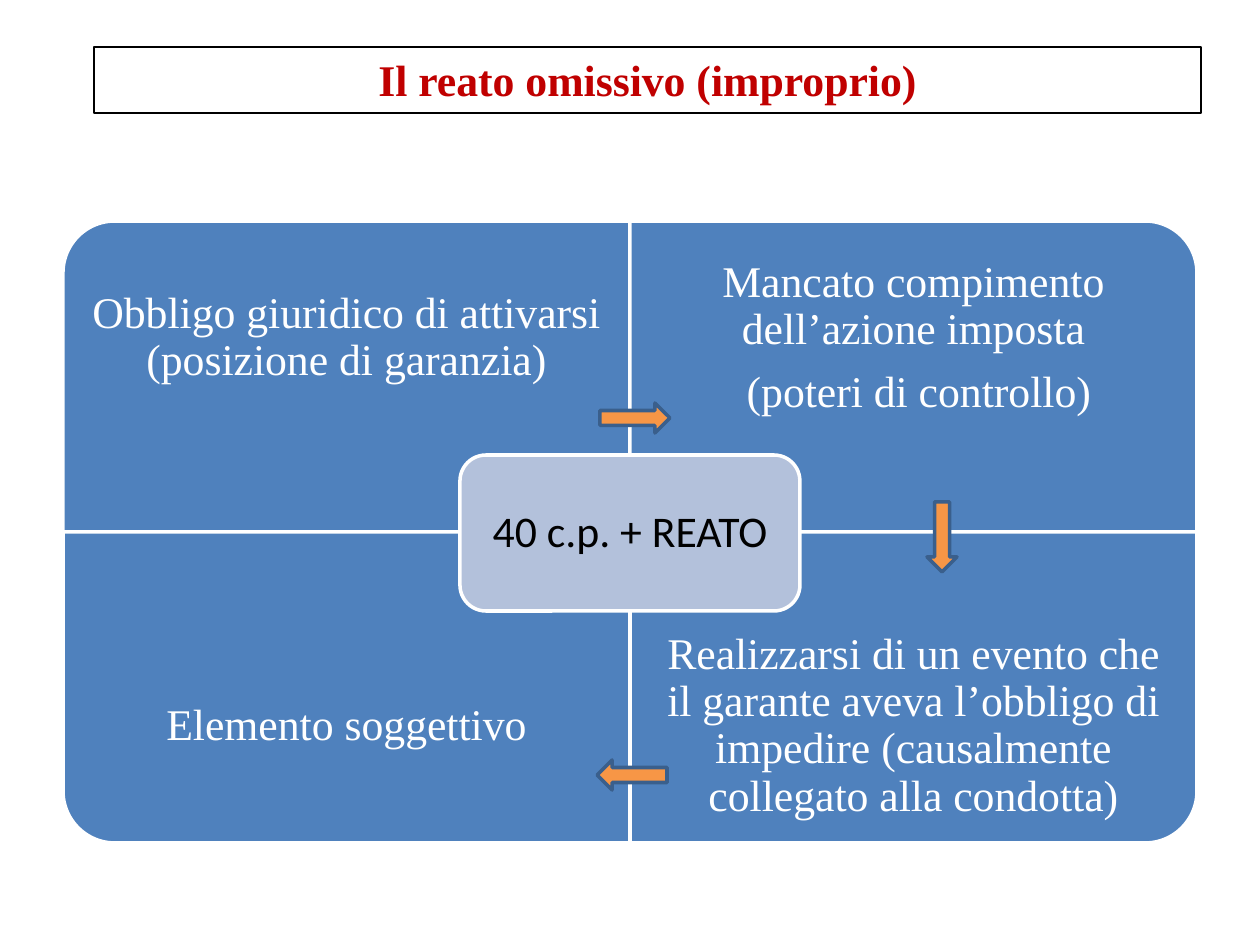
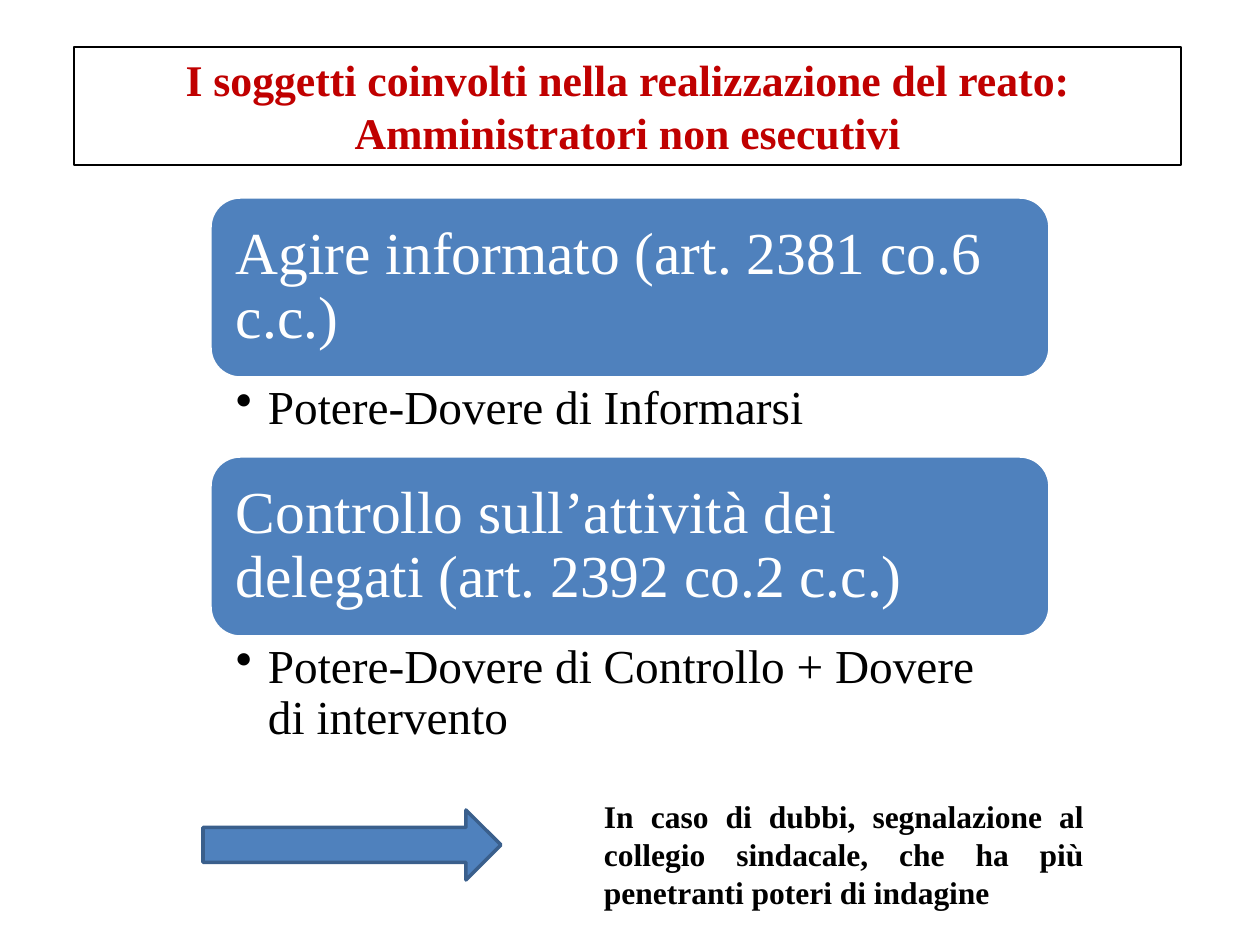
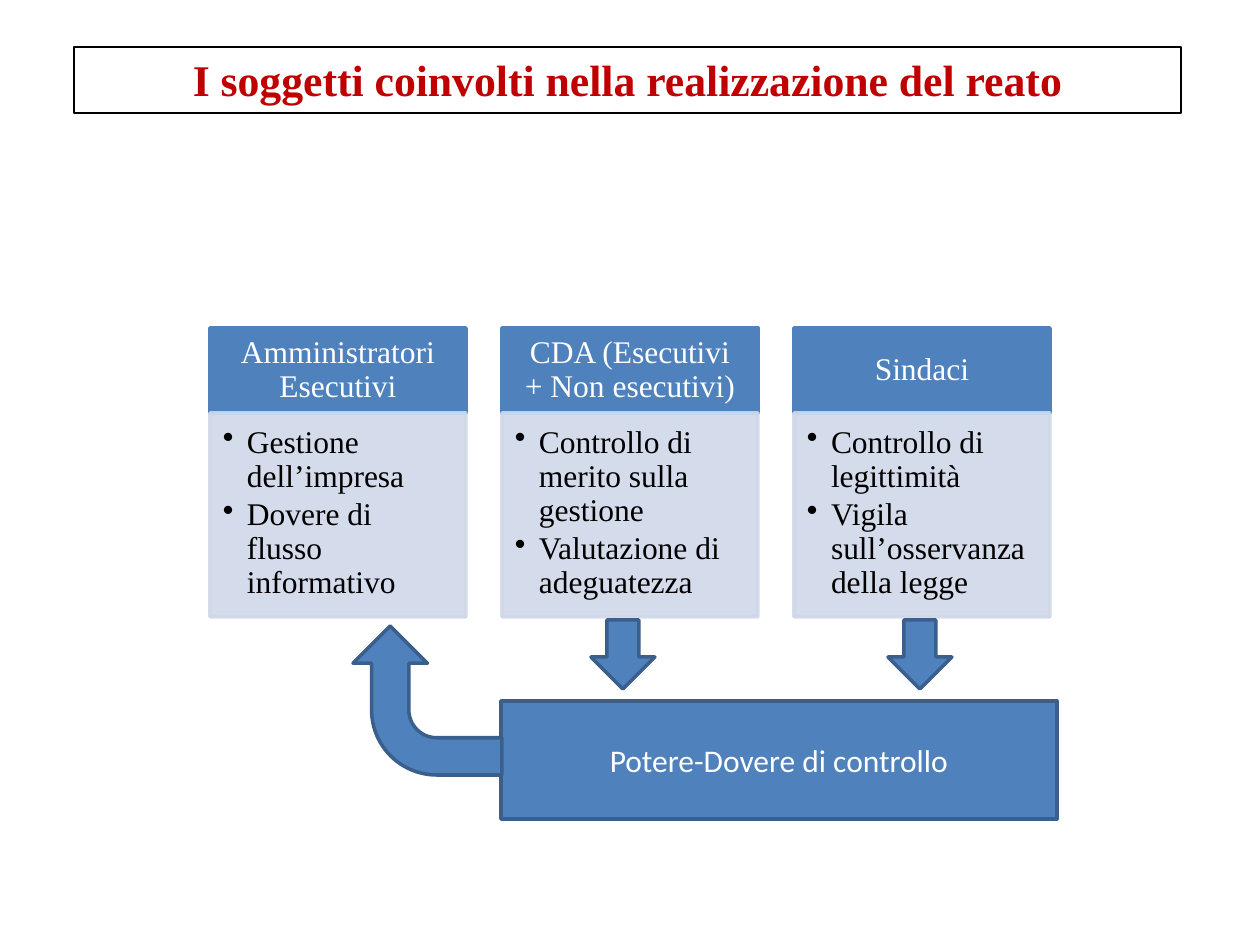
"""Build three slides on omissive offences and the people involved in them."""
import pptx
import pptx.dml.color
import pptx.enum.shapes
import pptx.enum.text
import pptx.oxml.ns
import pptx.util
from lxml import etree

PX = 914400 // 126
SERIF = "Times New Roman"
SANS = "Calibri"
BLACK = pptx.dml.color.RGBColor(0x00, 0x00, 0x00)
WHITE = pptx.dml.color.RGBColor(0xFF, 0xFF, 0xFF)
RED = pptx.dml.color.RGBColor(0xC0, 0x00, 0x00)
BLUE = pptx.dml.color.RGBColor(0x4F, 0x81, 0xBD)
DARK_BLUE = pptx.dml.color.RGBColor(0x3A, 0x5F, 0x8C)
GREY_BLUE = pptx.dml.color.RGBColor(0xB3, 0xC1, 0xDB)
PALE_BLUE = pptx.dml.color.RGBColor(0xD0, 0xD8, 0xE8)
ORANGE = pptx.dml.color.RGBColor(0xF7, 0x96, 0x46)
PRESET = pptx.enum.shapes.MSO_SHAPE
ALIGN = pptx.enum.text.PP_ALIGN
ANCHOR = pptx.enum.text.MSO_ANCHOR
qn = pptx.oxml.ns.qn


def draw(slide, preset, box, fill, outline, rotation=0):
    """Add a filled preset shape with a 2 pt outline; box is in px."""
    shape = slide.shapes.add_shape(preset, *[length * PX for length in box])
    shape.shadow.inherit = False
    shape.rotation = rotation
    shape.fill.solid()
    shape.fill.fore_color.rgb = fill
    shape.line.color.rgb = outline
    shape.line.width = pptx.util.Pt(2)
    return shape


def write(shape, paragraphs, size, color, font=SERIF, bold=False, align=ALIGN.CENTER,
          anchor=ANCHOR.MIDDLE, margins=(13, 6, 13, 6), spacing=0.9, gap=0, indent=0):
    """Fill a shape with paragraphs; an indent in px makes them bulleted."""
    frame = shape.text_frame
    frame.word_wrap = True
    frame.auto_size = pptx.enum.text.MSO_AUTO_SIZE.NONE
    frame.vertical_anchor = anchor
    (frame.margin_left, frame.margin_top,
     frame.margin_right, frame.margin_bottom) = [margin * PX for margin in margins]
    for index, text in enumerate(paragraphs):
        paragraph = frame.add_paragraph() if index else frame.paragraphs[0]
        paragraph.alignment = align
        paragraph.line_spacing = spacing
        paragraph.space_before = pptx.util.Pt(gap if index else 0)
        run = paragraph.add_run()
        run.text = text
        run.font.name = font
        run.font.size = pptx.util.Pt(size)
        run.font.bold = bold
        run.font.color.rgb = color
        if indent:
            properties = paragraph._p.get_or_add_pPr()
            properties.set("marL", str(indent * PX))
            properties.set("indent", str(-indent * PX))
            etree.SubElement(properties, qn("a:buChar")).set("char", "•")


deck = pptx.Presentation()
deck.slide_width = pptx.util.Inches(10)
deck.slide_height = pptx.util.Inches(7.5)

headings = [
    ("Il reato omissivo (improprio)", 94, 66),
    ("I soggetti coinvolti nella realizzazione del reato: Amministratori non esecutivi", 74, 118),
    ("I soggetti coinvolti nella realizzazione del reato", 74, 66),
]
for heading, left, height in headings:
    title = deck.slides.add_slide(deck.slide_layouts[5]).shapes.title
    title.left, title.top = left * PX, 47 * PX
    title.width, title.height = 1107 * PX, height * PX
    title.line.color.rgb = BLACK
    title.line.width = pptx.util.Pt(0.75)
    write(title, [heading], 25, RED, bold=True, anchor=ANCHOR.TOP, spacing=1.0)
offence, directors, roles = deck.slides

QUARTER_W, QUARTER_H, LABEL_H = 567, 311, 234
TURN_SHIFT = (QUARTER_W - QUARTER_H) // 2
quarters = [
    (0, 0, 270, ["Obbligo giuridico di attivarsi (posizione di garanzia)"]),
    (1, 0, 0, ["Mancato compimento dell’azione imposta", " (poteri di controllo)"]),
    (0, 1, 180, ["Elemento soggettivo"]),
    (1, 1, 90, ["Realizzarsi di un evento che il garante aveva l’obbligo di impedire "
                "(causalmente collegato alla condotta)"]),
]
for column, row, rotation, requirement in quarters:
    left, top = 63 + column * QUARTER_W, 221 + row * QUARTER_H
    box = (left, top, QUARTER_W, QUARTER_H)
    if rotation in (90, 270):
        box = (left + TURN_SHIFT, top - TURN_SHIFT, QUARTER_H, QUARTER_W)
    draw(offence, PRESET.ROUND_1_RECTANGLE, box, BLUE, WHITE, rotation)
    label_top = top + row * (QUARTER_H - LABEL_H)
    label = offence.shapes.add_textbox(left * PX, label_top * PX, QUARTER_W * PX, LABEL_H * PX)
    write(label, requirement, 25, WHITE, margins=(24,) * 4, gap=8.75)

core = draw(offence, PRESET.ROUNDED_RECTANGLE, (460, 455, 340, 156), GREY_BLUE, WHITE)
write(core, ["40 c.p. + REATO"], 25, BLACK, font=SANS, margins=(12,) * 4)
for left, top, rotation in [(600, 403, 0), (907, 522, 90), (597, 760, 180)]:
    draw(offence, PRESET.RIGHT_ARROW, (left, top, 70, 30), ORANGE, DARK_BLUE, rotation)

duties = [
    ("Agire informato (art. 2381 co.6 c.c.)", "Potere-Dovere di Informarsi", 78),
    ("Controllo sull’attività dei delegati (art. 2392 co.2 c.c.)",
     "Potere-Dovere di Controllo + Dovere di intervento", 112),
]
for index, (duty, power, power_height) in enumerate(duties):
    top = 197 + index * 259
    banner = draw(directors, PRESET.ROUNDED_RECTANGLE, (210, top, 840, 181), BLUE, WHITE)
    write(banner, [duty], 34, WHITE, align=ALIGN.LEFT, margins=(17,) * 4)
    detail = directors.shapes.add_textbox(210 * PX, (top + 181) * PX, 840 * PX, power_height * PX)
    write(detail, [power], 27, BLACK, align=ALIGN.LEFT, anchor=ANCHOR.TOP,
          margins=(26, 6, 33, 6), indent=32)

draw(directors, PRESET.RIGHT_ARROW, (203, 810, 298, 70), BLUE, DARK_BLUE)
advice = directors.shapes.add_textbox(591 * PX, 791 * PX, 506 * PX, 127 * PX)
write(advice, ["In caso di dubbi, segnalazione al collegio sindacale, "
               "che ha più penetranti poteri di indagine"],
      18, BLACK, bold=True, align=ALIGN.JUSTIFY, anchor=ANCHOR.TOP, spacing=1.0)

bodies = [
    ("Amministratori Esecutivi", ["Gestione dell’impresa", "Dovere di flusso informativo"]),
    ("CDA (Esecutivi + Non esecutivi)",
     ["Controllo di merito sulla gestione", "Valutazione di adeguatezza"]),
    ("Sindaci", ["Controllo di legittimità", "Vigila sull’osservanza della legge"]),
]
for index, (body, tasks) in enumerate(bodies):
    left = 210 + index * 292
    header = draw(roles, PRESET.RECTANGLE, (left, 328, 256, 85), BLUE, BLUE)
    write(header, [body], 18, WHITE, margins=(18, 10, 18, 10))
    panel = draw(roles, PRESET.RECTANGLE, (left, 413, 256, 204), PALE_BLUE, PALE_BLUE)
    for tint in panel._element.spPr.iter(qn("a:srgbClr")):
        etree.SubElement(tint, qn("a:alpha")).set("val", "90000")
    write(panel, tasks, 18, BLACK, align=ALIGN.LEFT, anchor=ANCHOR.TOP,
          margins=(13, 13, 18, 20), gap=2.7, indent=24)

for left in (591, 888):
    draw(roles, PRESET.DOWN_ARROW, (left, 620, 64, 69), BLUE, DARK_BLUE)
control = draw(roles, PRESET.RECTANGLE, (501, 701, 556, 118), BLUE, DARK_BLUE)
write(control, ["Potere-Dovere di controllo"], 18, WHITE, font=SANS, spacing=1.0)
draw(roles, PRESET.BENT_ARROW, (353, 626, 149, 149), BLUE, DARK_BLUE, 270)

deck.save("out.pptx")
